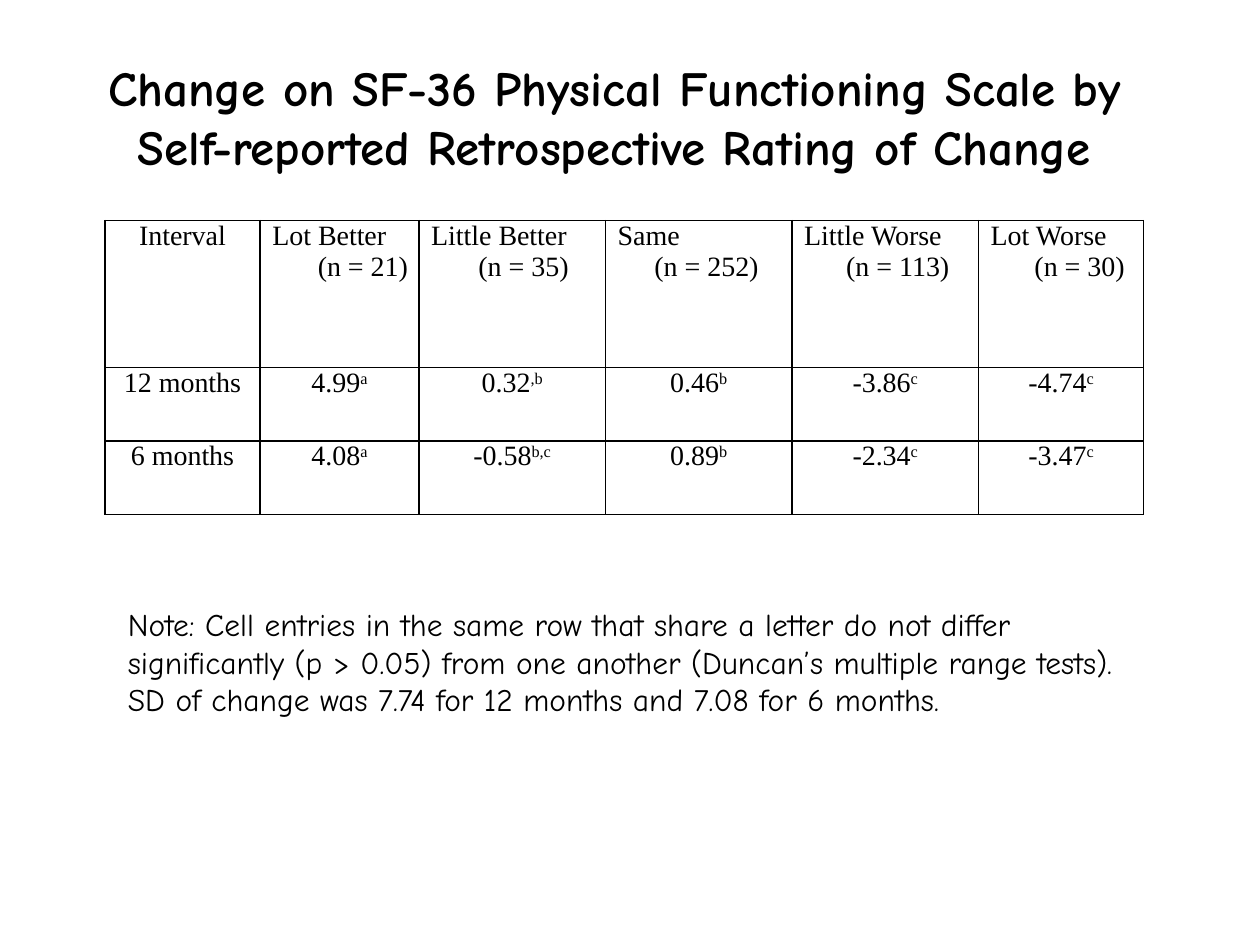
from dataclasses import dataclass

from lxml import etree
from pptx import Presentation
from pptx.dml.color import RGBColor
from pptx.enum.text import MSO_ANCHOR, PP_ALIGN
from pptx.oxml.ns import qn
from pptx.util import Pt

LEFT, CENTER = PP_ALIGN.LEFT, PP_ALIGN.CENTER
TOP, MIDDLE = MSO_ANCHOR.TOP, MSO_ANCHOR.MIDDLE


@dataclass(frozen=True)
class Theme:
    """Colours, fonts and type sizes of the slide."""

    ink: str = "000000"
    text_font: str = "Comic Neue"
    table_font: str = "Times New Roman"
    title_size: float = 28
    note_size: float = 18
    table_size: float = 16
    border: float = 1


THEME = Theme()
TITLE = ("Change on SF-36 Physical Functioning Scale by\v"
         "Self-reported Retrospective Rating of Change")
NOTE = ("Note: Cell entries in the same row that share a letter do not differ "
        "significantly (p > 0.05) from one another (Duncan’s multiple range tests). "
        "SD of change was 7.74 for 12 months and 7.08 for 6 months.")
COLUMN_WIDTHS = (88.6, 90.8, 106.6, 106.6, 106.6, 94.4)
ROW_HEIGHTS = (84, 42, 42)
LABEL_INDENT = 2
GROUPS = (
    ("Lot Better", "(n = 21)", 28),
    ("Little Better", "(n = 35)", 29),
    ("Same", "(n = 252)", 23),
    ("Little Worse", "(n = 113)", 26),
    ("Lot Worse", "(n = 30)", 27),
)
RESULTS = (
    ("12 months", (("4.99", "a"), ("0.32", ",b"), ("0.46", "b"),
                   ("-3.86", "c"), ("-4.74", "c"))),
    ("6 months", (("4.08", "a"), ("-0.58", "b,c"), ("0.89", "b"),
                  ("-2.34", "c"), ("-3.47", "c"))),
)


def format_paragraph(p, font, size, align=CENTER, bold=False):
    """Align a paragraph and format all its runs."""
    p.alignment = align
    for r in p.runs:
        r.font.name = font
        r.font.size = Pt(size)
        r.font.bold = bold
        r.font.color.rgb = RGBColor.from_string(THEME.ink)


def add_text(slide, text, box, size, align=LEFT, anchor=TOP, bold=False):
    """Add a wrapping text box with one paragraph."""
    tf = slide.shapes.add_textbox(*map(Pt, box)).text_frame
    tf.word_wrap = True
    tf.vertical_anchor = anchor
    p = tf.paragraphs[0]
    p.text = text
    format_paragraph(p, THEME.text_font, size, align, bold)


def style_cell(cell):
    """Give a cell its margins, thin borders and no fill."""
    cell.margin_left = cell.margin_right = Pt(5)
    cell.margin_top = cell.margin_bottom = 0
    tc_pr = cell._tc.get_or_add_tcPr()
    for side in ("a:lnL", "a:lnR", "a:lnT", "a:lnB"):
        ln = etree.SubElement(tc_pr, qn(side), w=str(Pt(THEME.border)))
        fill = etree.SubElement(ln, qn("a:solidFill"))
        etree.SubElement(fill, qn("a:srgbClr"), val=THEME.ink)
    cell.fill.background()


def fill_header(cell, label, count, count_indent):
    """Write a group label with its indented sample size below."""
    tf = cell.text_frame
    tf.text = f"{label}\n{count}"
    for p, indent in zip(tf.paragraphs, (LABEL_INDENT, count_indent)):
        format_paragraph(p, THEME.table_font, THEME.table_size, LEFT)
        p._p.get_or_add_pPr().set("marL", str(Pt(indent)))


def fill_value(cell, text, letters=""):
    """Write a centred entry with optional superscript letters."""
    p = cell.text_frame.paragraphs[0]
    p.text = text
    if letters:
        r = p.add_run()
        r.text = letters
        r.font._element.set("baseline", "30000")
    format_paragraph(p, THEME.table_font, THEME.table_size)


def add_results_table(slide, left, top):
    """Add the table of change scores by group and interval."""
    size = (sum(COLUMN_WIDTHS), sum(ROW_HEIGHTS))
    table = slide.shapes.add_table(
        len(ROW_HEIGHTS), len(COLUMN_WIDTHS), *map(Pt, (left, top, *size))).table
    table.first_row = table.horz_banding = False
    for column, width in zip(table.columns, COLUMN_WIDTHS):
        column.width = Pt(width)
    for row, height in zip(table.rows, ROW_HEIGHTS):
        row.height = Pt(height)
    for cell in table.iter_cells():
        style_cell(cell)
    fill_value(table.cell(0, 0), "Interval")
    for col, group in enumerate(GROUPS, 1):
        fill_header(table.cell(0, col), *group)
    for row, (interval, entries) in enumerate(RESULTS, 1):
        fill_value(table.cell(row, 0), interval)
        for col, entry in enumerate(entries, 1):
            fill_value(table.cell(row, col), *entry)


def main():
    """Build the slide and save it."""
    prs = Presentation()
    prs.slide_width, prs.slide_height = Pt(720), Pt(540)
    slide = prs.slides.add_slide(prs.slide_layouts[6])
    add_text(slide, TITLE, (18, 21.6, 666, 90), THEME.title_size, CENTER, MIDDLE, True)
    add_results_table(slide, 60, 126)
    add_text(slide, NOTE, (66, 342, 594, 87), THEME.note_size)
    prs.save("out.pptx")


if __name__ == "__main__":
    main()
